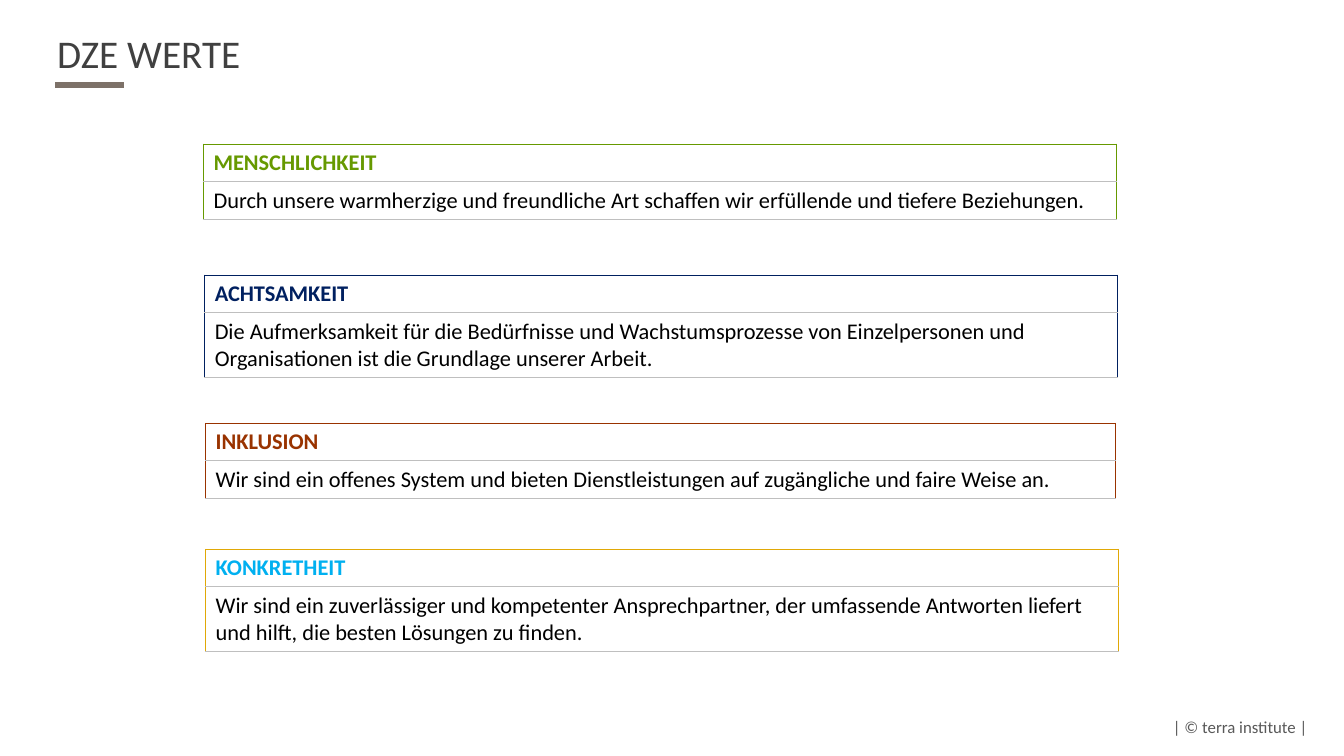
from lxml import etree
from pptx import Presentation
from pptx.dml.color import RGBColor
from pptx.enum.shapes import MSO_CONNECTOR
from pptx.enum.text import MSO_ANCHOR, PP_ALIGN
from pptx.oxml.ns import qn
from pptx.util import Pt

STRAIGHT = MSO_CONNECTOR.STRAIGHT
MIDDLE, TOP = MSO_ANCHOR.MIDDLE, MSO_ANCHOR.TOP
LEFT, RIGHT = PP_ALIGN.LEFT, PP_ALIGN.RIGHT

WHITE = RGBColor(0xFF, 0xFF, 0xFF)
BLACK = RGBColor(0x00, 0x00, 0x00)
TITLE_GRAY = RGBColor(0x40, 0x40, 0x40)
FOOTER_GRAY = RGBColor(0x59, 0x59, 0x59)
RULE_GRAY = RGBColor(0xBF, 0xBF, 0xBF)
TAUPE = RGBColor(0x7D, 0x71, 0x68)
GREEN = RGBColor(0x66, 0x99, 0x00)
NAVY = RGBColor(0x00, 0x20, 0x60)
RUST = RGBColor(0x99, 0x33, 0x00)
GOLD = RGBColor(0xE0, 0xA8, 0x07)
SKY = RGBColor(0x00, 0xB0, 0xF0)

HEADING_HEIGHT = 26.8
LINE_HEIGHT = 19.5


def add_text(frame, text, size, color, bold=False, align=LEFT):
    paragraph = frame.paragraphs[0]
    paragraph.alignment = align
    run = paragraph.add_run()
    run.text = text
    run.font.name = "Calibri"
    run.font.size = Pt(size)
    run.font.bold = bold
    run.font.color.rgb = color


def add_border(cell, side, color):
    properties = cell._tc.get_or_add_tcPr()
    line = etree.SubElement(properties, qn(f"a:ln{side}"), w=str(Pt(1)))
    fill = etree.SubElement(line, qn("a:solidFill"))
    etree.SubElement(fill, qn("a:srgbClr"), val=str(color))


presentation = Presentation()
presentation.slide_width = Pt(960)
presentation.slide_height = Pt(540)
slide = presentation.slides.add_slide(presentation.slide_layouts[6])

labels = [
    ("| © terra institute |", 774.7, 508.3, 166.3, 21.6, 12, FOOTER_GRAY, RIGHT, TOP),
    ("DZE WERTE", 33.8, 15.1, 680.4, 45.4, 28, TITLE_GRAY, LEFT, MIDDLE),
]
for text, left, top, width, height, size, color, align, anchor in labels:
    box = slide.shapes.add_textbox(Pt(left), Pt(top), Pt(width), Pt(height))
    box.text_frame.word_wrap = True
    box.text_frame.vertical_anchor = anchor
    add_text(box.text_frame, text, size, color, align=align)

underline = slide.shapes.add_connector(STRAIGHT, Pt(39.6), Pt(60.5), Pt(88.6), Pt(60.5))
underline.line.color.rgb = TAUPE
underline.line.width = Pt(4.5)
etree.SubElement(underline._element.spPr, qn("a:effectLst"))

values = [
    ("KONKRETHEIT",
     "Wir sind ein zuverlässiger und kompetenter Ansprechpartner, der umfassende "
     "Antworten liefert und hilft, die besten Lösungen zu finden.",
     146.9, 392.4, 652.3, 2, SKY, GOLD),
    ("INKLUSION",
     "Wir sind ein offenes System und bieten Dienstleistungen auf zugängliche und "
     "faire Weise an.",
     146.9, 302.4, 650.2, 1, RUST, RUST),
    ("MENSCHLICHKEIT",
     "Durch unsere warmherzige und freundliche Art schaffen wir erfüllende und "
     "tiefere Beziehungen.",
     145.4, 103, 652.3, 1, GREEN, GREEN),
    ("ACHTSAMKEIT",
     "Die Aufmerksamkeit für die Bedürfnisse und Wachstumsprozesse von "
     "Einzelpersonen und Organisationen ist die Grundlage unserer Arbeit.",
     146.2, 196.6, 652.3, 2, NAVY, NAVY),
]
for heading, statement, left, top, width, lines, heading_color, border_color in values:
    statement_height = HEADING_HEIGHT + (lines - 1) * LINE_HEIGHT
    frame = slide.shapes.add_table(2, 1, Pt(left), Pt(top), Pt(width),
                                   Pt(HEADING_HEIGHT + statement_height))
    table = frame.table
    table.first_row = False
    table.horz_banding = False
    rows = [
        (heading, HEADING_HEIGHT, heading_color, True, border_color),
        (statement, statement_height, BLACK, False, RULE_GRAY),
    ]
    for index, (text, height, color, bold, top_color) in enumerate(rows):
        table.rows[index].height = Pt(height)
        cell = table.cell(index, 0)
        add_text(cell.text_frame, text, 16, color, bold)
        add_border(cell, "L", border_color)
        add_border(cell, "R", border_color)
        add_border(cell, "T", top_color)
        add_border(cell, "B", RULE_GRAY)
        cell.fill.solid()
        cell.fill.fore_color.rgb = WHITE

presentation.save("out.pptx")
